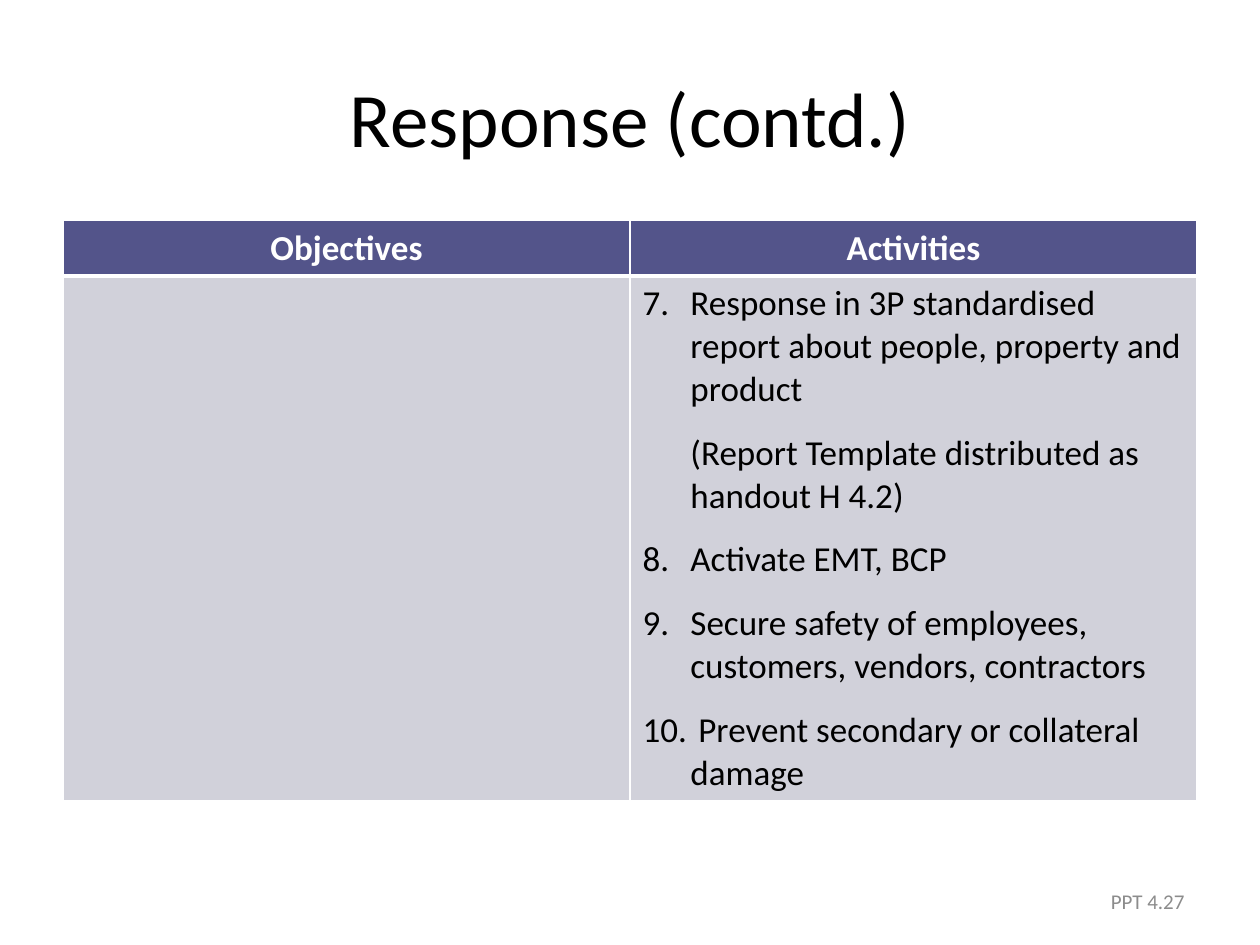
from lxml import etree
from pptx import Presentation
from pptx.dml.color import RGBColor
from pptx.enum.text import MSO_ANCHOR, PP_ALIGN
from pptx.oxml.ns import qn
from pptx.util import Inches, Pt

LEFT, CENTER, RIGHT = PP_ALIGN.LEFT, PP_ALIGN.CENTER, PP_ALIGN.RIGHT
MIDDLE = MSO_ANCHOR.MIDDLE
BLACK = RGBColor(0x00, 0x00, 0x00)
WHITE = RGBColor(0xFF, 0xFF, 0xFF)
GREY = RGBColor(0x8C, 0x8C, 0x8C)
INDIGO = RGBColor(0x53, 0x54, 0x8A)
LAVENDER = RGBColor(0xD1, 0xD1, 0xDA)

TITLE_FONT = {"name": "Calibri", "size": Pt(44)}
HEADER_FONT = {"name": "Calibri", "size": Pt(20), "bold": True}
BODY_FONT = {"name": "Calibri", "size": Pt(20), "bold": False}
FOOTER_FONT = {"name": "Calibri", "size": Pt(12)}

HEADERS = ["Objectives", "Activities"]
ACTIVITIES = [
    (7, "Response in 3P standardised report about people, property and product"),
    (None, "(Report Template distributed as handout H 4.2)"),
    (8, "Activate EMT, BCP"),
    (8, "Secure safety of employees, customers, vendors, contractors"),
    (8, " Prevent secondary or collateral damage"),
]


def place(shape, box):
    for name, value in zip(("left", "top", "width", "height"), box):
        setattr(shape, name, Inches(value))


def write(para, text, look, color, align):
    para.alignment = align
    span = para.add_run()
    span.text = text
    for name, value in look.items():
        setattr(span.font, name, value)
    span.font.color.rgb = color


def indent(para, start):
    props = para._p.get_or_add_pPr()
    hang = Inches(0.38)
    props.set("marL", str(hang))
    props.set("indent", str(-hang if start else 0))
    if start:
        etree.SubElement(props, qn("a:buFont"), typeface="+mj-lt")
        etree.SubElement(props, qn("a:buAutoNum"), type="arabicPeriod", startAt=str(start))
    else:
        etree.SubElement(props, qn("a:buNone"))


def style_cell(cell, fill, top, bottom):
    props = cell._tc.get_or_add_tcPr()
    for side, width in (("L", 1), ("R", 1), ("T", top), ("B", bottom)):
        line = etree.SubElement(props, qn(f"a:ln{side}"), w=str(Pt(width)))
        solid = etree.SubElement(line, qn("a:solidFill"))
        etree.SubElement(solid, qn("a:srgbClr"), val=str(WHITE))
    cell.fill.solid()
    cell.fill.fore_color.rgb = fill


def add_title(page, box):
    title = page.shapes.title
    place(title, box)
    title.text_frame.vertical_anchor = MIDDLE
    write(title.text_frame.paragraphs[0], "Response (contd.)", TITLE_FONT, BLACK, CENTER)


def add_activity_table(page, box):
    table = page.shapes.add_table(2, len(HEADERS), *map(Inches, box)).table
    header_height = 0.43
    table.rows[0].height = Inches(header_height)
    table.rows[1].height = Inches(box[3] - header_height)
    for column, header in enumerate(HEADERS):
        cell = table.cell(0, column)
        style_cell(cell, INDIGO, 1, 3)
        para = cell.text_frame.paragraphs[0]
        para.space_after = Pt(12)
        write(para, header, HEADER_FONT, WHITE, CENTER)
        style_cell(table.cell(1, column), LAVENDER, 3, 1)
    frame = table.cell(1, 1).text_frame
    for number, (start, text) in enumerate(ACTIVITIES):
        para = frame.add_paragraph() if number else frame.paragraphs[0]
        indent(para, start)
        para.space_after = Pt(12)
        write(para, text, BODY_FONT, BLACK, LEFT)


def add_footer(page, box):
    frame = page.shapes.add_textbox(*map(Inches, box)).text_frame
    frame.word_wrap = True
    frame.vertical_anchor = MIDDLE
    write(frame.paragraphs[0], "PPT 4.27", FOOTER_FONT, GREY, RIGHT)


def main():
    deck = Presentation()
    deck.slide_width, deck.slide_height = Inches(10), Inches(7.5)
    page = deck.slides.add_slide(deck.slide_layouts[5])
    add_title(page, (0.5, 0.3, 9, 1.25))
    add_activity_table(page, (0.5, 1.75, 9, 4.53))
    add_footer(page, (7.17, 6.95, 2.33, 0.4))
    deck.save("out.pptx")


if __name__ == "__main__":
    main()
